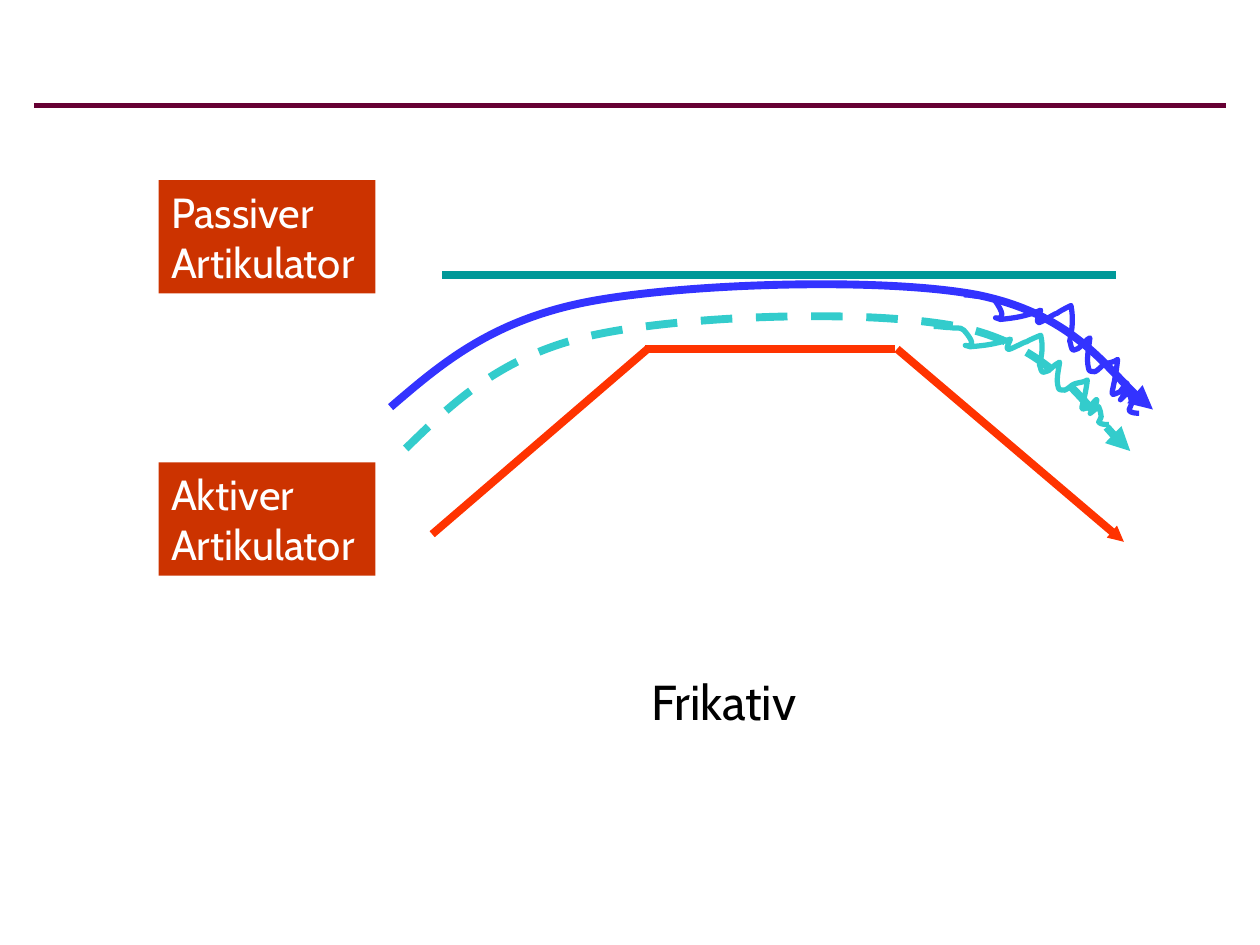
from dataclasses import dataclass

from lxml import etree
from pptx import Presentation
from pptx.dml.color import RGBColor
from pptx.enum.dml import MSO_LINE
from pptx.enum.shapes import MSO_CONNECTOR, MSO_SHAPE
from pptx.enum.text import MSO_ANCHOR, MSO_AUTO_SIZE, PP_ALIGN
from pptx.oxml.ns import qn
from pptx.util import Inches, Pt

RECT = MSO_SHAPE.RECTANGLE
STRAIGHT = MSO_CONNECTOR.STRAIGHT
DASH = MSO_LINE.DASH
LEFT, CENTER = PP_ALIGN.LEFT, PP_ALIGN.CENTER
FRAME = {"word_wrap": False, "auto_size": MSO_AUTO_SIZE.SHAPE_TO_FIT_TEXT,
         "vertical_anchor": MSO_ANCHOR.TOP}


@dataclass(frozen=True)
class Theme:
    font: str = "Cabin"
    label: int = 24
    title: int = 28
    thin: float = 3
    thick: float = 4.5
    rule: str = "660033"
    box: str = "CC3300"
    light: str = "FFFFFF"
    dark: str = "000000"
    roof: str = "009999"
    tongue: str = "FF3300"
    inner: str = "33CCCC"
    outer: str = "3333FF"


THEME = Theme()

# A start point, then three Bezier points per curve, on a grid of the given size
FLOW = ((575, 113), [
    (0, 111), (38, 74), (76, 37), (149, 21), (223, 5), (371, 0), (442, 15),
    (513, 31), (553, 96), (575, 113)])
NOISE = ((139, 77), [
    (0, 0), (4, 0), (9, 1), (13, 1), (17, 2), (21, 0), (24, 3),
    (41, 22), (16, 12), (29, 16), (41, 15), (49, 14), (61, 10),
    (60, 13), (57, 17), (59, 18), (60, 19), (72, 12), (74, 12),
    (77, 10), (85, 7), (85, 7), (87, 16), (86, 22), (84, 30),
    (85, 32), (85, 36), (87, 36), (92, 36), (95, 30), (100, 28),
    (99, 35), (97, 42), (99, 48), (99, 50), (102, 50), (104, 50),
    (107, 49), (109, 46), (112, 45), (115, 44), (119, 44), (122, 42),
    (119, 66), (113, 67), (124, 63), (127, 60), (132, 52), (128, 63),
    (125, 69), (120, 71), (131, 63), (132, 66), (133, 68), (133, 71),
    (133, 72), (131, 74), (131, 75), (132, 77), (138, 77), (139, 77)])


def apply(item, values):
    for name, value in values.items():
        setattr(item, name, value)


def stroke(shape, color, width, dash=None, head=None):
    """Style a line; head is the size of its arrowhead, such as "med"."""
    line = shape.line
    line.color.rgb = RGBColor.from_string(color)
    apply(line, {"width": Pt(width), "dash_style": dash})
    if head:
        etree.SubElement(line._get_or_add_ln(), qn("a:tailEnd"),
                         type="triangle", w=head, len=head)


def add_line(shapes, start, end, color, width, head=None):
    ends = [Inches(v) for v in (*start, *end)]
    line = shapes.add_connector(STRAIGHT, *ends)
    stroke(line, color, width, head=head)
    etree.SubElement(line._element.spPr, qn("a:effectLst"))


def add_curve(shapes, box, outline, color, width, dash=None, head=None):
    """Stretch a Bezier outline over the box."""
    x, y, w, h = box
    (cols, rows), points = outline
    spots = [(Inches(x + w * px / cols), Inches(y + h * py / rows))
             for px, py in points]
    pen = shapes.build_freeform(*spots[0])
    pen.add_line_segments(spots[1:], close=False)
    shape = pen.convert_to_shape()
    shape.shadow.inherit = False
    shape.fill.background()
    stroke(shape, color, width, dash, head)

    track = shape._element.find(".//" + qn("a:path"))
    steps = track.findall(qn("a:lnTo"))
    for i in range(0, len(steps), 3):
        curve = etree.SubElement(track, qn("a:cubicBezTo"))
        for step in steps[i:i + 3]:
            curve.append(step[0])
            track.remove(step)


def write(shape, text, size, color, align):
    frame = shape.text_frame
    apply(frame, FRAME)
    frame.text = text
    para = frame.paragraphs[0]
    para.alignment = align
    for run in para.runs:
        apply(run.font, {"name": THEME.font, "size": Pt(size)})
        run.font.color.rgb = RGBColor.from_string(color)


def add_label(shapes, box, text):
    shape = shapes.add_shape(RECT, *map(Inches, box))
    shape.shadow.inherit = False
    shape.fill.solid()
    shape.fill.fore_color.rgb = RGBColor.from_string(THEME.box)
    shape.line.fill.background()
    write(shape, text, THEME.label, THEME.light, LEFT)


def add_name(shapes, box, text):
    shape = shapes.add_textbox(*map(Inches, box))
    write(shape, text, THEME.title, THEME.dark, CENTER)


def add_tongue(shapes, box):
    """Draw the active articulator: a rise, a flat top and a fall."""
    x, y, w, h = box
    group = shapes.add_group_shape().shapes
    add = (THEME.tongue, THEME.thick)
    add_line(group, (x, y + h - 0.06), (x + 1.71, y), *add)
    add_line(group, (x + 1.69, y), (x + 3.67, y), *add)
    add_line(group, (x + 3.69, y), (x + w, y + h), *add, head="sm")


def add_air(shapes, box, noise, color, dash=None):
    """Draw an air stream in box, with its turbulence in noise."""
    group = shapes.add_group_shape().shapes
    add_curve(group, box, FLOW, color, THEME.thick, dash, "med")
    add_curve(group, noise, NOISE, color, THEME.thin)


def main():
    deck = Presentation()
    apply(deck, {"slide_width": Inches(10), "slide_height": Inches(7.5)})
    shapes = deck.slides.add_slide(deck.slide_layouts[6]).shapes

    add_line(shapes, (0.27, 0.84), (9.73, 0.84), THEME.rule, THEME.thin)
    for top, word in ((3.67, "Aktiver"), (1.43, "Passiver")):
        add_label(shapes, (1.26, top, 1.72, 0.9), word + " \vArtikulator")
    add_line(shapes, (3.51, 2.18), (8.86, 2.18), THEME.roof, THEME.thick)
    add_tongue(shapes, (3.43, 2.77, 5.49, 1.53))
    add_air(shapes, (3.22, 2.45, 5.75, 1.13), (7.41, 2.59, 1.39, 0.78),
            THEME.inner, DASH)
    add_air(shapes, (3.1, 2.2, 6.05, 1.05), (7.65, 2.34, 1.39, 0.94),
            THEME.outer)
    add_name(shapes, (5.02, 5.28, 1.45, 0.57), "Frikativ")
    deck.save("out.pptx")


if __name__ == "__main__":
    main()
